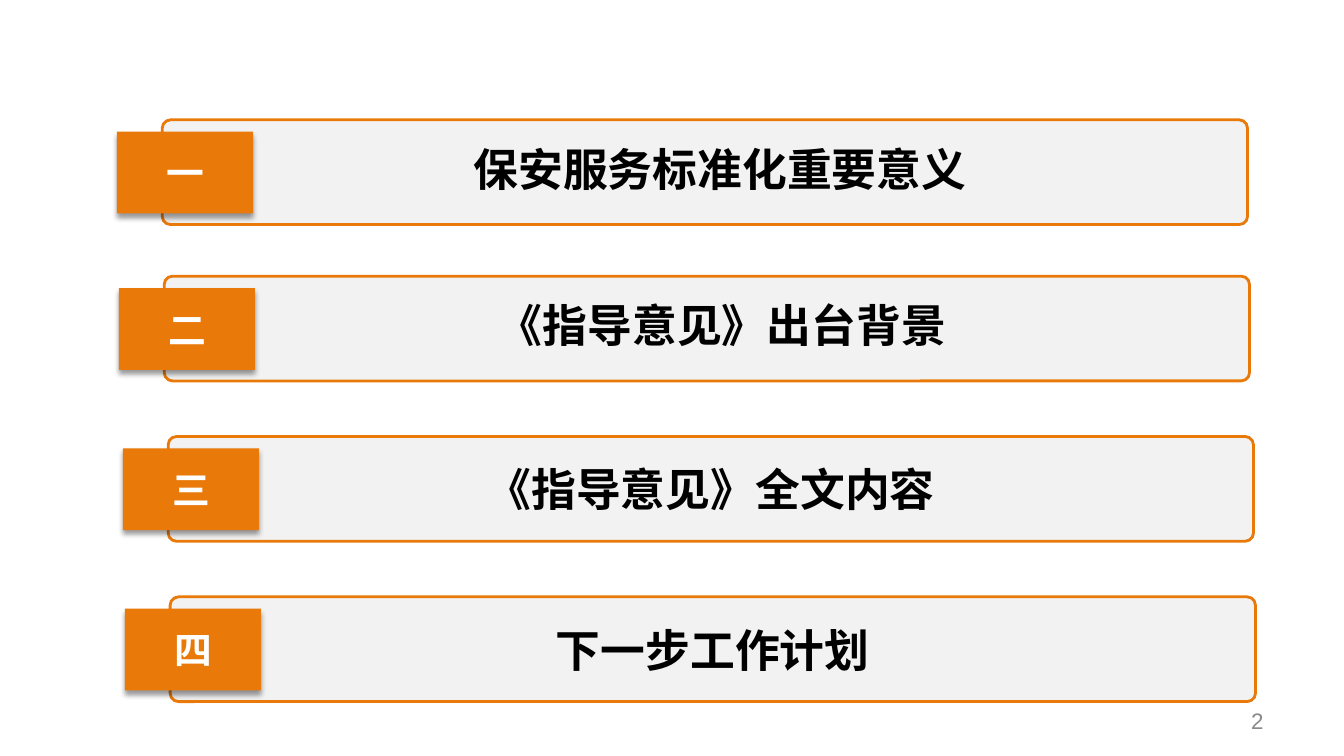
from lxml import etree
from pptx import Presentation
from pptx.dml.color import RGBColor
from pptx.enum.shapes import MSO_SHAPE
from pptx.enum.text import MSO_ANCHOR, PP_ALIGN
from pptx.oxml import parse_xml
from pptx.oxml.ns import nsdecls, qn
from pptx.util import Cm, Pt

ORANGE = RGBColor(0xE9, 0x79, 0x09)
PALE = RGBColor(0xF2, 0xF2, 0xF2)
WHITE = RGBColor(0xFF, 0xFF, 0xFF)
BLACK = RGBColor(0, 0, 0)
GREY = RGBColor(0x89, 0x89, 0x89)
RECT, ROUND = MSO_SHAPE.RECTANGLE, MSO_SHAPE.ROUNDED_RECTANGLE
MIDDLE, TOP = MSO_ANCHOR.MIDDLE, MSO_ANCHOR.TOP
CENTER, RIGHT = PP_ALIGN.CENTER, PP_ALIGN.RIGHT

CJK = "Noto Sans CJK SC"
TAG = {"name": CJK, "size": Pt(27), "bold": True}
HEAD = {"name": CJK, "size": Pt(32), "bold": True}
PAGE = {"name": "Arial", "size": Pt(16)}

SHADOW = (
    f'<a:effectLst {nsdecls("a")}>'
    '<a:outerShdw blurRad="50800" dist="38100" dir="5400000" rotWithShape="0">'
    '<a:srgbClr val="000000"><a:alpha val="40000"/></a:srgbClr>'
    '</a:outerShdw></a:effectLst>'
)


def write(shape, text, look, color, anchor=MIDDLE, align=CENTER):
    frame = shape.text_frame
    frame.word_wrap = True
    frame.vertical_anchor = anchor
    para = frame.paragraphs[0]
    para.alignment = align
    run = para.add_run()
    run.text = text
    for key, value in look.items():
        setattr(run.font, key, value)
    run.font.color.rgb = color
    # East Asian typeface
    etree.SubElement(run.font._element, qn("a:ea"), typeface=look["name"])


def block(kind, left, top, width, height, fill):
    shape = shapes.add_shape(kind, Cm(left), Cm(top), Cm(width), Cm(height))
    shape.shadow.inherit = False
    shape.fill.solid()
    shape.fill.fore_color.rgb = fill
    return shape


deck = Presentation()
deck.slide_width, deck.slide_height = Cm(33.88), Cm(19.05)
shapes = deck.slides.add_slide(deck.slide_layouts[6]).shapes

# Page number
page = shapes.add_textbox(Cm(24.28), Cm(17.65), Cm(7.9), Cm(1.02))
frame = page.text_frame
frame.margin_left = frame.margin_right = Cm(0.33)
frame.margin_top = frame.margin_bottom = Cm(0.18)
write(page, "2", PAGE, GREY, align=RIGHT)

# Agenda rows: number, heading, bar left, bar top, heading in its own box
rows = [
    ("一", "保安服务标准化重要意义", 4.09, 3.02, True),
    ("二", "《指导意见》出台背景", 4.14, 6.96, True),
    ("三", "《指导意见》全文内容", 4.24, 11, False),
    ("四", "下一步工作计划", 4.29, 15.04, False),
]
for number, title, left, top, boxed in rows:
    # Bar
    bar = block(ROUND, left, top, 27.36, 2.64, PALE)
    bar.adjustments[0] = 0.08
    bar.line.color.rgb = ORANGE
    bar.line.width = Pt(2)

    # Number tag with a soft shadow
    tag = block(RECT, left - 1.14, top + 0.3, 3.43, 2.06, ORANGE)
    tag.line.fill.background()
    props = tag._element.spPr
    props.replace(props.find(qn("a:effectLst")), parse_xml(SHADOW))
    write(tag, number, TAG, WHITE)

    # Heading
    if boxed:
        box = shapes.add_textbox(Cm(left + 2.29), Cm(top + 0.43), Cm(23.55), Cm(1.63))
        write(box, title, HEAD, BLACK, anchor=TOP)
    else:
        write(bar, title, HEAD, BLACK)

deck.save("out.pptx")
